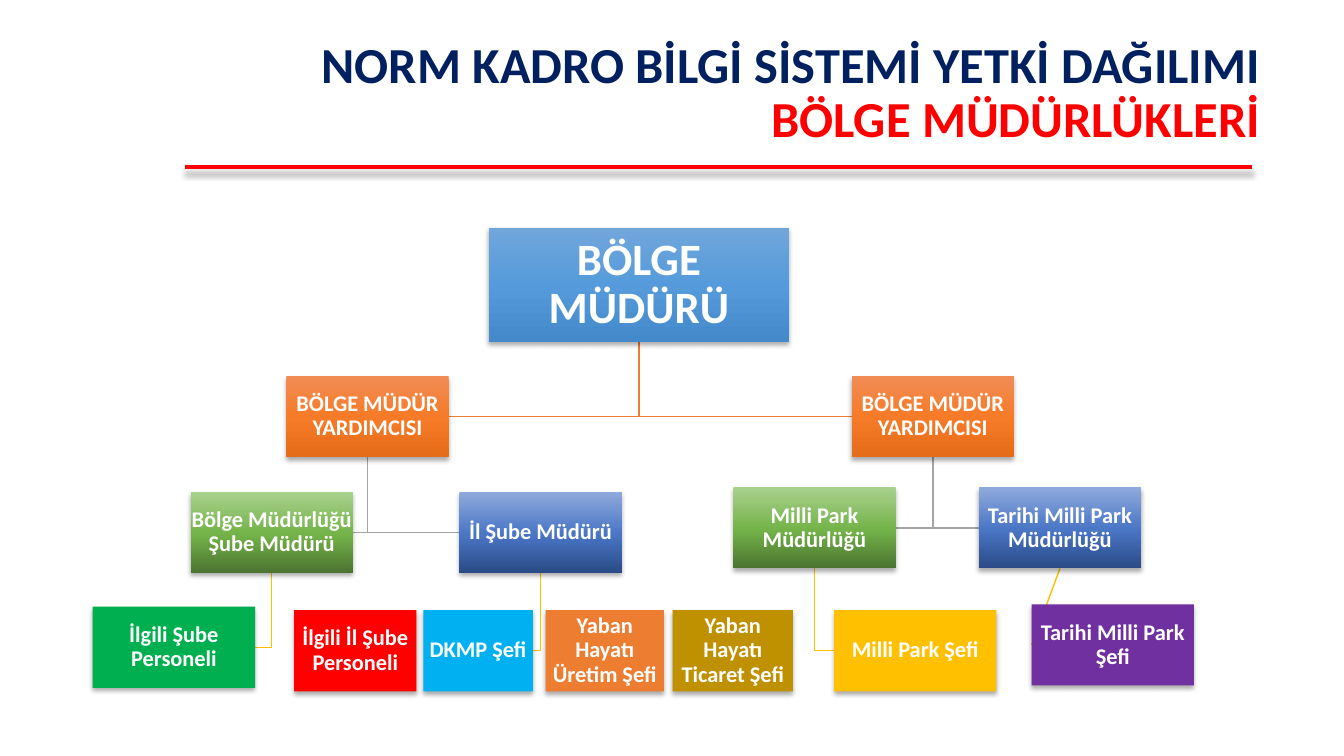
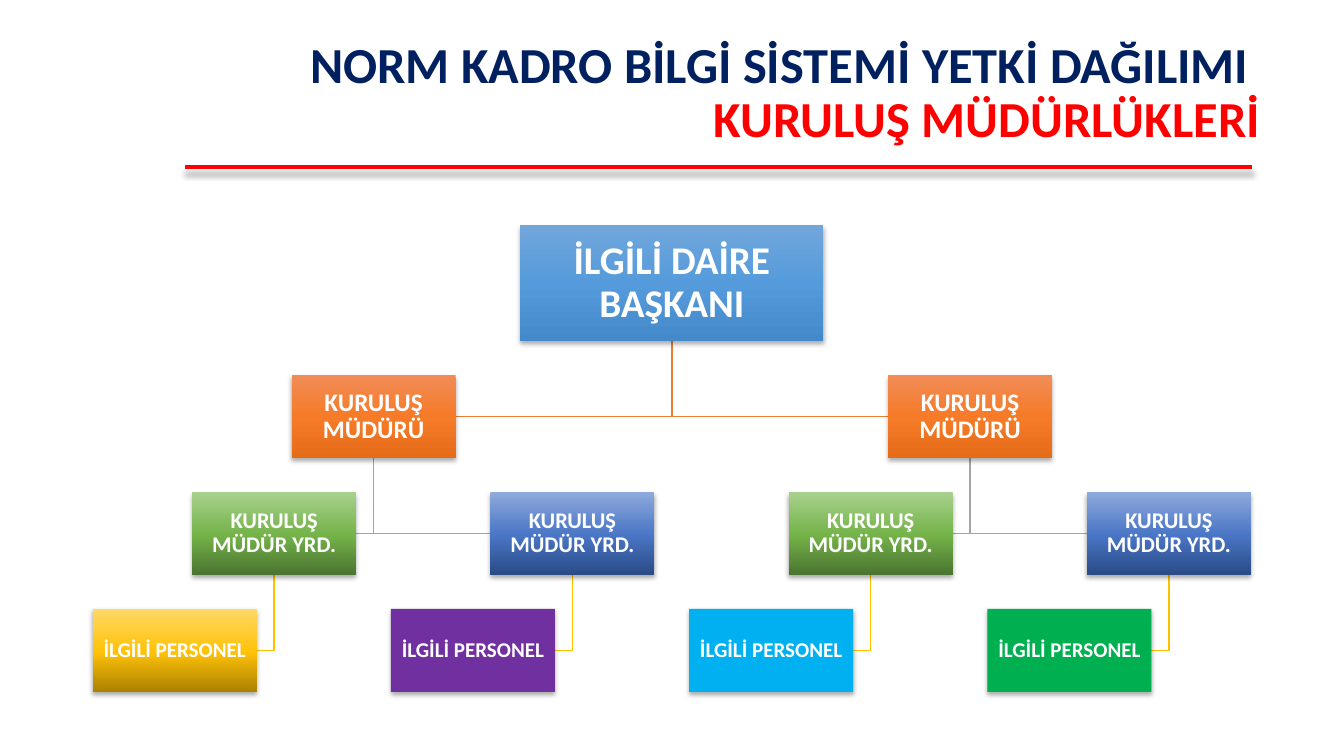
from dataclasses import dataclass
from lxml.etree import SubElement
from pptx import Presentation
from pptx.dml.color import RGBColor
from pptx.enum.shapes import MSO_CONNECTOR, MSO_SHAPE
from pptx.enum.text import MSO_ANCHOR, PP_ALIGN
from pptx.oxml.ns import qn
from pptx.util import Inches, Pt


@dataclass(frozen=True)
class Theme:
    font = "Calibri"
    white, navy, red = "FFFFFF", "002060", "FF0000"
    title_size, rule_width, link_width = 36, 3, 1
    rule_shadow = (25, 4, 4)
    box_shadow = (32, 3.5, 2.2)
    links = {"head": "ED7D31", "deputy": "A5A5A5", "branch": "FFC000"}
    fills = {
        "blue": ((0, "71A6DB"), (50, "559BDB"), (100, "448ACA")),
        "orange": ((0, "F18C57"), (50, "F67B28"), (100, "E56C19")),
        "leaf": ((0, "A9D18E"), (52, "74B349"), (100, "4B7430")),
        "indigo": ((0, "8FAADC"), (52, "4A76C6"), (100, "2A4B86")),
        "gold": ((0, "FFD966"), (52, "FFC208"), (100, "AB8100")),
        "green": "00B050", "red": "FF0000", "sky": "00B0F0", "copper": "ED7D31",
        "ochre": "BF9000", "amber": "FFC000", "purple": "7030A0",
    }


@dataclass
class Node:
    text: str
    fill: str
    col: float
    row: float
    size: int = 16
    cols: float = 1.66
    rows: float = 0.7


T = Theme()
SLIDE_W, SLIDE_H = 13.33, 7.5
LEFT = 0.92

REGION_NODES = {
    "head": Node("BÖLGE MÜDÜRÜ", "blue", 4.05, -1.28, 32, 3.07, 0.985),
    "deputy 1": Node("BÖLGE MÜDÜR YARDIMCISI", "orange", 1.98, 0),
    "deputy 2": Node("BÖLGE MÜDÜR YARDIMCISI", "orange", 7.76, 0),
    "region 1": Node("Bölge Müdürlüğü Şube Müdürü", "leaf", 1, 1),
    "city 1": Node("İl Şube Müdürü", "indigo", 3.75, 1),
    "park 1": Node("Milli Park Müdürlüğü", "leaf", 6.55, 0.96),
    "heritage 1": Node("Tarihi Milli Park Müdürlüğü", "indigo", 9.06, 0.96),
    "region staff": Node("İlgili Şube Personeli", "green", 0, 1.99),
    "city staff": Node("İlgili İl Şube Personeli", "red", 2.06, 2.02, cols=1.25),
    "nature chief": Node("DKMP Şefi", "sky", 3.38, 2.02, cols=1.12),
    "breeding chief": Node("Yaban Hayatı Üretim Şefi", "copper", 4.63, 2.02, cols=1.21),
    "trade chief": Node("Yaban Hayatı Ticaret Şefi", "ochre", 5.93, 2.02, cols=1.23),
    "park chief": Node("Milli Park Şefi", "amber", 7.58, 2.02),
    "heritage chief": Node("Tarihi Milli Park Şefi", "purple", 9.6, 1.97),
}
REGION_LINKS = [
    ("head", "deputy 1"), ("head", "deputy 2"),
    ("deputy 1", "region 1"), ("deputy 1", "city 1"),
    ("deputy 2", "park 1"), ("deputy 2", "heritage 1"),
    ("region 1", "region staff"), ("city 1", "nature chief"), ("park 1", "park chief"),
]

OFFICE_NODES = {"head": Node("İLGİLİ DAİRE BAŞKANI", "blue", 4.3, -1.28, 28, 3.05, 0.99)}
OFFICE_LINKS = []
OFFICE_BOX = dict(cols=1.65, rows=0.71)


def add_office(key, parent, *node):
    OFFICE_NODES[key] = Node(*node, **OFFICE_BOX)
    OFFICE_LINKS.append((parent, key))


for d in range(2):
    add_office(f"deputy {d}", "head", "KURULUŞ MÜDÜRÜ", "orange", 2 + 6 * d, 0, 18)
for b, staff_fill in enumerate(["gold", "purple", "sky", "green"]):
    branch_fill = ("leaf", "indigo")[b % 2]
    add_office(f"branch {b}", f"deputy {b // 2}", "KURULUŞ MÜDÜR YRD.", branch_fill, 1 + 3 * b, 1)
    add_office(f"staff {b}", f"branch {b}", "İLGİLİ PERSONEL", staff_fill, 3 * b, 2, 15)

CHARTS = [
    dict(title=("NORM KADRO BİLGİ SİSTEMİ YETKİ DAĞILIMI", "BÖLGE MÜDÜRLÜKLERİ"),
         nodes=REGION_NODES, links=REGION_LINKS,
         direct=[("heritage 1", "heritage chief")],
         top=3.73, col_w=0.97, row_h=1.15),
    dict(title=("NORM KADRO BİLGİ SİSTEMİ YETKİ DAĞILIMI ", "KURULUŞ MÜDÜRLÜKLERİ"),
         nodes=OFFICE_NODES, links=OFFICE_LINKS, direct=[],
         top=3.72, col_w=0.986, row_h=1.16),
]


def add_color(parent, color, alpha=None):
    clr = SubElement(parent, qn("a:srgbClr"), val=color)
    if alpha is not None:
        SubElement(clr, qn("a:alpha"), val=str(alpha * 1000))


def set_effects(spPr, shadow=None):
    effects = spPr.find(qn("a:effectLst"))
    if effects is None:
        effects = SubElement(spPr, qn("a:effectLst"))
    if shadow:
        alpha, blur, dist = shadow
        outer = SubElement(effects, qn("a:outerShdw"), blurRad=str(Pt(blur)),
                           dist=str(Pt(dist)), dir="5400000", algn="ctr", rotWithShape="0")
        add_color(outer, "000000", alpha)


def set_fill(sp, fill):
    if isinstance(fill, str):
        sp.fill.solid()
        sp.fill.fore_color.rgb = RGBColor.from_string(fill)
        return
    sp.fill.gradient()
    grad = sp._element.spPr.find(qn("a:gradFill"))
    for child in list(grad):
        grad.remove(child)
    stops = SubElement(grad, qn("a:gsLst"))
    for pos, color in fill:
        add_color(SubElement(stops, qn("a:gs"), pos=str(pos * 1000)), color)
    SubElement(grad, qn("a:lin"), ang="5400000", scaled="0")


def add_run(p, text, size, color):
    r = p.add_run()
    r.text = text
    r.font.name, r.font.size, r.font.bold = T.font, Pt(size), True
    r.font.color.rgb = RGBColor.from_string(color)


def first_paragraph(tf, align):
    tf.word_wrap = True
    tf.vertical_anchor = MSO_ANCHOR.MIDDLE
    p = tf.paragraphs[0]
    p.alignment, p.line_spacing = align, 0.9
    return p


def set_stroke(sp, color, width):
    sp.line.color.rgb = RGBColor.from_string(color)
    sp.line.width = Pt(width)


def add_line(s, start, end, color, width, shadow=None):
    line = s.shapes.add_connector(MSO_CONNECTOR.STRAIGHT, *start, *end)
    set_stroke(line, color, width)
    set_effects(line._element.spPr, shadow)
    return line


def add_elbow(s, start, end, color):
    builder = s.shapes.build_freeform(*start)
    builder.add_line_segments([(start[0], end[1]), end], close=False)
    elbow = builder.convert_to_shape()
    elbow.fill.background()
    set_stroke(elbow, color, T.link_width)
    elbow.shadow.inherit = False


def add_title(s, title):
    y = Inches(1.66)
    add_line(s, (Inches(12.42), y), (Inches(1.84), y), T.red, T.rule_width, T.rule_shadow)
    tb = s.shapes.add_textbox(Inches(1.1), Inches(0.4), Inches(11.5), Inches(1.07))
    p = first_paragraph(tb.text_frame, PP_ALIGN.RIGHT)
    add_run(p, title[0], T.title_size, T.navy)
    p.add_line_break()
    add_run(p, title[1], T.title_size, T.red)


def add_box(s, node, rect):
    sp = s.shapes.add_shape(MSO_SHAPE.RECTANGLE, *rect)
    set_fill(sp, T.fills[node.fill])
    sp.line.fill.background()
    sp.shadow.inherit = False
    set_effects(sp._element.spPr, T.box_shadow)
    tf = sp.text_frame
    tf.margin_left = tf.margin_right = tf.margin_top = tf.margin_bottom = Inches(0.01)
    add_run(first_paragraph(tf, PP_ALIGN.CENTER), node.text, node.size, T.white)
    return sp


def side_point(rect, side):
    x, y, w, h = rect
    return [(x + w // 2, y), (x, y + h // 2), (x + w // 2, y + h), (x + w, y + h // 2)][side]


def link_color(parent):
    return T.links.get(parent.split()[0], T.links["branch"])


def add_org_chart(s, nodes, links, direct, top, col_w, row_h):
    rects = {key: (Inches(LEFT + n.col * col_w), Inches(top + n.row * row_h),
                   Inches(n.cols * col_w), Inches(n.rows * row_h))
             for key, n in nodes.items()}
    for parent, child in links:
        side = 3 if rects[child][0] < rects[parent][0] else 1
        add_elbow(s, side_point(rects[parent], 2), side_point(rects[child], side),
                  link_color(parent))
    lines = [add_line(s, side_point(rects[parent], 2), side_point(rects[child], 1),
                      link_color(parent), T.link_width) for parent, child in direct]
    boxes = {key: add_box(s, n, rects[key]) for key, n in nodes.items()}
    for line, (parent, child) in zip(lines, direct):
        line.begin_connect(boxes[parent], 2)
        line.end_connect(boxes[child], 1)


def main():
    prs = Presentation()
    prs.slide_width, prs.slide_height = Inches(SLIDE_W), Inches(SLIDE_H)
    for chart in CHARTS:
        s = prs.slides.add_slide(prs.slide_layouts[6])
        add_title(s, chart["title"])
        add_org_chart(s, **{k: v for k, v in chart.items() if k != "title"})
    prs.save("out.pptx")


if __name__ == "__main__":
    main()
